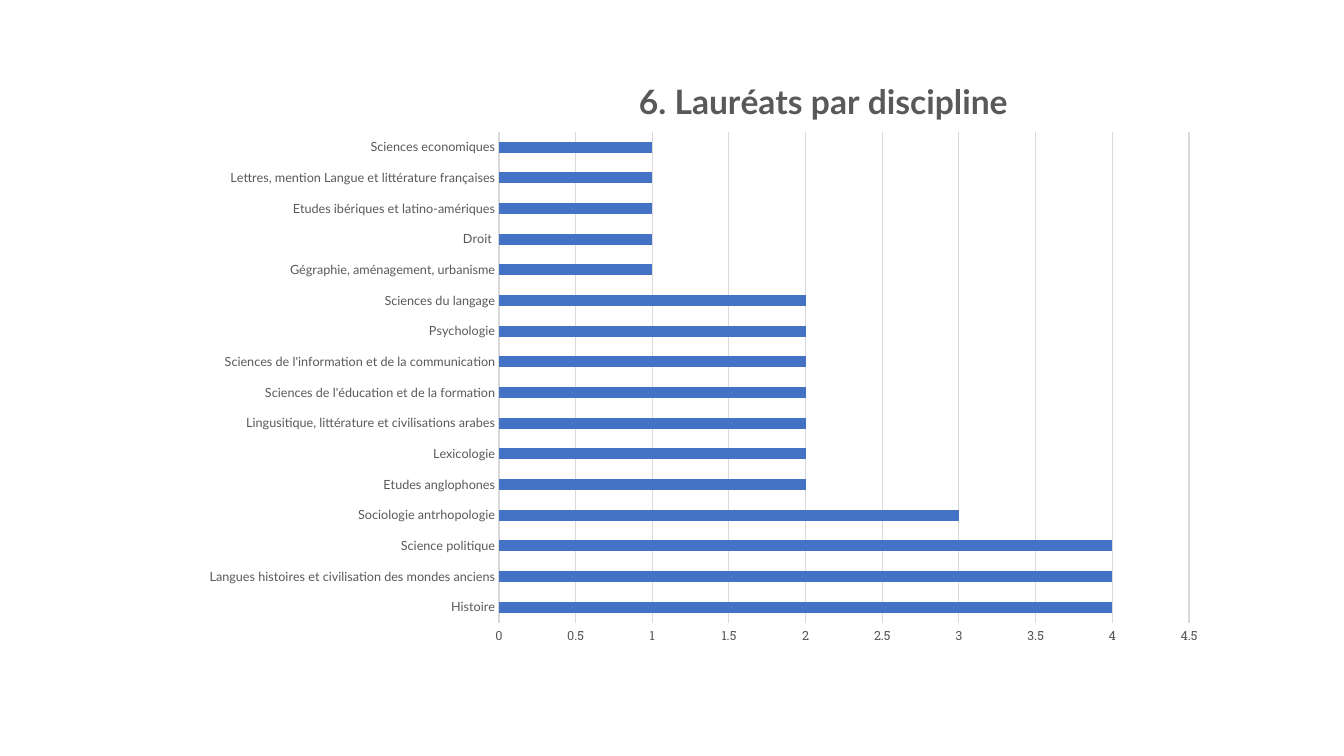
from dataclasses import dataclass

from lxml import etree
from pptx import Presentation
from pptx import util as u
from pptx.chart import data as chart_data
from pptx.dml import color
from pptx.enum import chart as chart_kinds
from pptx.oxml import ns

PX = 914400 / 100.8  # EMU per pixel


@dataclass(frozen=True)
class Theme:
    bar: str = "4472C4"
    text: str = "595959"
    line: str = "D9D9D9"
    label_font: str = "Lato"
    number_font: str = "Roboto Slab"
    title_size: int = 24
    base_size: int = 10
    axis_size: int = 9
    line_width: float = 0.75


LAUREATES = {
    "Histoire": 4,
    "Langues histoires et civilisation des mondes anciens": 4,
    "Science politique": 4,
    "Sociologie antrhopologie": 3,
    "Etudes anglophones": 2,
    "Lexicologie": 2,
    "Lingusitique, littérature et civilisations arabes": 2,
    "Sciences de l'éducation et de la formation": 2,
    "Sciences de l'information et de la communication": 2,
    "Psychologie": 2,
    "Sciences du langage": 2,
    "Gégraphie, aménagement, urbanisme": 1,
    "Droit ": 1,
    "Etudes ibériques et latino-amériques": 1,
    "Lettres, mention Langue et littérature françaises": 1,
    "Sciences economiques": 1,
}


def set_all(target, values):
    for name, value in values.items():
        setattr(target, name, value)


def place(parent, index, **fractions):
    """Give a chart part a fixed place, in fractions of the chart."""
    layout = parent.find(ns.qn("c:layout"))
    if layout is None:
        layout = etree.Element(ns.qn("c:layout"))
        parent.insert(index, layout)
    manual = etree.SubElement(layout, ns.qn("c:manualLayout"))
    if "w" in fractions:
        etree.SubElement(manual, ns.qn("c:layoutTarget"), val="inner")
    for mode in ("xMode", "yMode"):
        etree.SubElement(manual, ns.qn(f"c:{mode}"), val="edge")
    for name, value in fractions.items():
        etree.SubElement(manual, ns.qn(f"c:{name}"), val=str(value))


class SlideBuilder:
    def __init__(self, deck, theme):
        self.theme = theme
        self.slide = deck.slides.add_slide(deck.slide_layouts[6])

    def style_font(self, font, name, size, bold=False):
        set_all(font, {"name": name, "size": u.Pt(size), "bold": bold})
        font.color.rgb = color.RGBColor.from_string(self.theme.text)

    def style_line(self, line):
        line.color.rgb = color.RGBColor.from_string(self.theme.line)
        line.width = u.Pt(self.theme.line_width)

    def bar_chart(self, values, left, top, width, height):
        theme = self.theme
        data = chart_data.CategoryChartData()
        data.categories = list(values)
        data.add_series("Series 1", list(values.values()))
        frame = self.slide.shapes.add_chart(
            chart_kinds.XL_CHART_TYPE.BAR_CLUSTERED,
            *(round(n * PX) for n in (left, top, width, height)), data)
        chart = frame.chart
        chart.has_legend = False
        set_all(chart.font, {"name": theme.number_font, "size": u.Pt(theme.base_size)})

        # Bars
        plot = chart.plots[0]
        set_all(plot, {"gap_width": 182, "vary_by_categories": False})
        fill = plot.series[0].format.fill
        fill.solid()
        fill.fore_color.rgb = color.RGBColor.from_string(theme.bar)

        # Axes
        none = chart_kinds.XL_TICK_MARK.NONE
        for axis, font in ((chart.category_axis, theme.label_font),
                           (chart.value_axis, theme.number_font)):
            set_all(axis, {"major_tick_mark": none, "minor_tick_mark": none})
            self.style_font(axis.tick_labels.font, font, theme.axis_size)
        chart.category_axis.has_major_gridlines = False
        self.style_line(chart.category_axis.format.line)
        set_all(chart.value_axis, {"minimum_scale": 0, "maximum_scale": 4.5,
                                   "major_unit": 0.5, "has_major_gridlines": True})
        self.style_line(chart.value_axis.major_gridlines.format.line)
        chart.value_axis.format.line.fill.background()
        plot_area = chart.element.find(".//" + ns.qn("c:plotArea"))
        place(plot_area, 0, x=0.3, y=0.13, w=0.67, h=0.81)
        return chart

    def chart_title(self, chart, text):
        chart.has_title = True
        title = chart.chart_title
        title.include_in_layout = False
        para = title.text_frame.paragraphs[0]
        span = para.add_run()
        span.text = text
        self.style_font(span.font, self.theme.label_font, self.theme.title_size, bold=True)
        place(chart.element.find(".//" + ns.qn("c:title")), 1, x=0.43, y=0.03)


def main():
    deck = Presentation()
    set_all(deck, {"slide_width": round(1344 * PX), "slide_height": round(756 * PX)})
    page = SlideBuilder(deck, Theme())
    chart = page.bar_chart(LAUREATES, 190, 53, 1030, 606)
    page.chart_title(chart, "6. Lauréats par discipline")
    deck.save("out.pptx")


if __name__ == "__main__":
    main()
